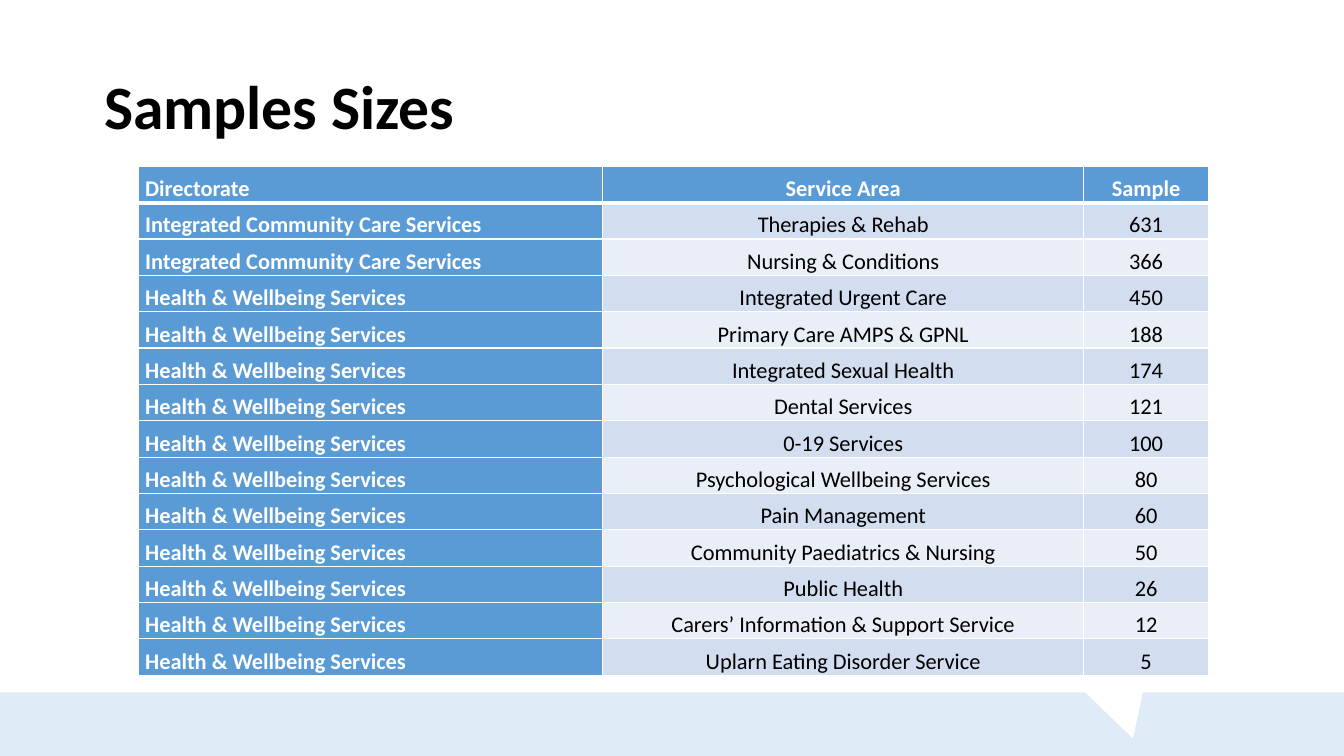
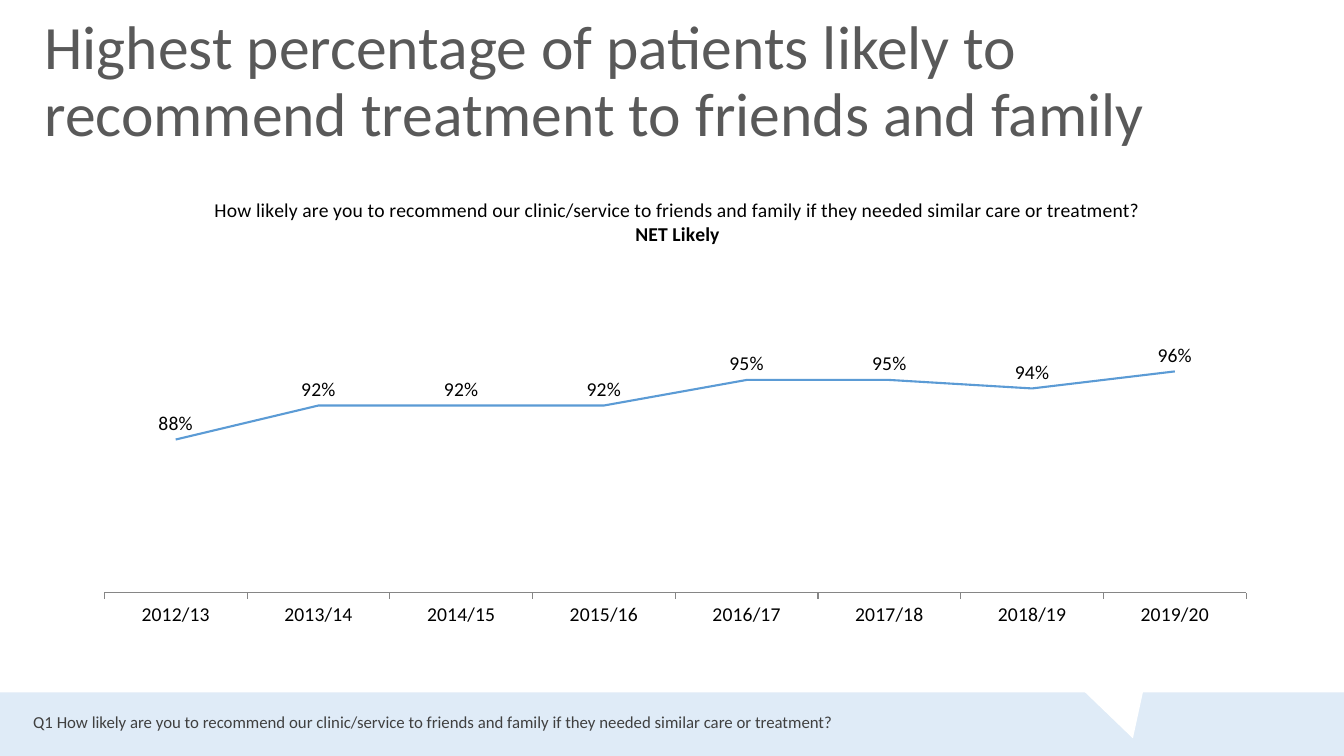
from lxml.etree import SubElement
from pptx import Presentation
from pptx.chart.data import CategoryChartData
from pptx.dml.color import RGBColor
from pptx.enum.chart import XL_CHART_TYPE, XL_LABEL_POSITION, XL_MARKER_STYLE, XL_TICK_MARK
from pptx.enum.shapes import MSO_SHAPE
from pptx.enum.text import MSO_ANCHOR, MSO_AUTO_SIZE, PP_ALIGN
from pptx.oxml import parse_xml
from pptx.oxml.ns import nsdecls, qn
from pptx.util import Inches, Pt

WIDTH, HEIGHT = Inches(13.33), Inches(7.5)
FONT = "Calibri"
HUES = {
    "white": "FFFFFF", "black": "000000", "blue": "5B9BD5", "band": "DFEBF7",
    "odd": "D2DEEF", "even": "EAEFF7", "gray": "595959", "note": "404040",
    "axis": "868686",
}

CARE = "Integrated Community Care Services"
WELL = "Health & Wellbeing Services"
HEAD = ("Directorate", "Service Area", "Sample")
ROWS = [
    (CARE, "Therapies & Rehab", 631),
    (CARE, "Nursing & Conditions", 366),
    (WELL, "Integrated Urgent Care", 450),
    (WELL, "Primary Care AMPS & GPNL", 188),
    (WELL, "Integrated Sexual Health", 174),
    (WELL, "Dental Services", 121),
    (WELL, "0-19 Services", 100),
    (WELL, "Psychological Wellbeing Services", 80),
    (WELL, "Pain Management", 60),
    (WELL, "Community Paediatrics & Nursing", 50),
    (WELL, "Public Health", 26),
    (WELL, "Carers’ Information & Support Service", 12),
    (WELL, "Uplarn Eating Disorder Service", 5),
]
COLS = (4.61, 4.77, 1.24)

ASK = ("How likely are you to recommend our clinic/service to friends and family "
       "if they needed similar care or treatment?")
# Newest year first; the category axis runs in reverse
SCORES = {
    "2019/20": 0.96, "2018/19": 0.94, "2017/18": 0.95, "2016/17": 0.95,
    "2015/16": 0.92, "2014/15": 0.92, "2013/14": 0.92, "2012/13": 0.88,
}


def hue(name):
    return RGBColor.from_string(HUES[name])


def grid(left, top, width, height):
    """Turn a box on a grid of 100 columns and 100 rows into lengths."""
    return (int(WIDTH * left / 100), int(HEIGHT * top / 100),
            int(WIDTH * width / 100), int(HEIGHT * height / 100))


def style(font, size, color="black", bold=False):
    font.name, font.size, font.bold = FONT, Pt(size), bold
    font.color.rgb = hue(color)


def write(para, text, size, color="black", bold=False):
    run = para.add_run()
    run.text = text
    style(run.font, size, color, bold)


# Shared parts
def add_band(slide, master):
    """Make the bottom band and its notch, and set them behind the master."""
    parts = [
        (MSO_SHAPE.RECTANGLE, grid(0, 91.6, 100, 8.4), "band", 0),
        (MSO_SHAPE.ISOSCELES_TRIANGLE, grid(80.65, 88.67, 5.78, 9.2), "white", 163.1),
    ]
    for step, (kind, box, color, turn) in enumerate(parts):
        part = slide.shapes.add_shape(kind, *box)
        part.shadow.inherit = False
        part.fill.solid()
        part.fill.fore_color.rgb = hue(color)
        part.line.fill.background()
        part.rotation = turn
        part.element.nvSpPr.cNvPr.set("id", str(100 + step))
        master.shapes.element.insert(2 + step, part.element)


def add_title(slide, text, box, color, bold):
    title = slide.shapes.title
    title.left, title.top, title.width, title.height = box
    frame = title.text_frame
    frame.word_wrap = True
    frame.auto_size = MSO_AUTO_SIZE.NONE
    frame.vertical_anchor = MSO_ANCHOR.MIDDLE
    para = frame.paragraphs[0]
    para.alignment = PP_ALIGN.LEFT
    para.line_spacing = 0.9
    write(para, text, 44, color, bold)


def add_note(slide, text, box):
    frame = slide.shapes.add_textbox(*box).text_frame
    frame.word_wrap = True
    write(frame.paragraphs[0], text, 12, "note")


# Table
def edge(cell, widths):
    """Draw white borders; widths are points for left, right, top, bottom."""
    props = cell._tc.get_or_add_tcPr()
    for spot, (side, width) in enumerate(zip("LRTB", widths)):
        line = parse_xml(
            f'<a:ln{side} {nsdecls("a")} w="{Pt(width)}"><a:solidFill>'
            f'<a:srgbClr val="{HUES["white"]}"/></a:solidFill></a:ln{side}>')
        props.insert(spot, line)


def add_sheet(slide, box):
    lines = [HEAD] + ROWS
    sheet = slide.shapes.add_table(len(lines), len(HEAD), *box).table
    for col, share in zip(sheet.columns, COLS):
        col.width = int(box[2] * share / sum(COLS))
    for r, line in enumerate(lines):
        sheet.rows[r].height = box[3] // len(lines)
        for c, text in enumerate(line):
            cell = sheet.cell(r, c)
            strong = r == 0 or c == 0
            cell.margin_left = cell.margin_right = Inches(0.07)
            cell.margin_top = cell.margin_bottom = 0
            cell.vertical_anchor = MSO_ANCHOR.BOTTOM
            cell.fill.solid()
            cell.fill.fore_color.rgb = hue("blue" if strong else "odd" if r % 2 else "even")
            edge(cell, (1, 1, 3 if r == 1 else 1, 3 if r == 0 else 1))
            para = cell.text_frame.paragraphs[0]
            para.alignment = PP_ALIGN.CENTER if c else PP_ALIGN.LEFT
            write(para, str(text), 16, "white" if strong else "black", strong)


# Chart
def lay_out(node, spot, **shares):
    """Fix a chart part by shares of the chart's size."""
    for old in node.findall(qn("c:layout")):
        node.remove(old)
    layout = parse_xml(f'<c:layout {nsdecls("c")}><c:manualLayout/></c:layout>')
    inner = layout[0]
    if "w" in shares:
        SubElement(inner, qn("c:layoutTarget")).set("val", "inner")
    for key in "xy":
        SubElement(inner, qn(f"c:{key}Mode")).set("val", "edge")
    for key, share in shares.items():
        SubElement(inner, qn(f"c:{key}")).set("val", str(share))
    node.insert(spot, layout)


def add_trend(slide, box):
    data = CategoryChartData(number_format="0%")
    data.categories = list(SCORES)
    data.add_series("Series 1", list(SCORES.values()))
    chart = slide.shapes.add_chart(XL_CHART_TYPE.LINE, *box, data).chart
    style(chart.font, 10)
    chart.has_legend = False

    # Heading
    frame = chart.chart_title.text_frame
    write(frame.paragraphs[0], ASK, 14)
    write(frame.add_paragraph(), "NET Likely", 14, bold=True)
    lay_out(chart.chart_title._element, 1, x=0.11, y=0.03)
    lay_out(chart.plots[0]._element.getparent(), 0, x=0.02, y=0.34, w=0.96, h=0.55)

    # Axes
    years, rate = chart.category_axis, chart.value_axis
    years.reverse_order = True
    years.major_tick_mark = XL_TICK_MARK.OUTSIDE
    years.has_major_gridlines = False
    years.format.line.color.rgb = hue("axis")
    style(years.tick_labels.font, 14)
    rate.minimum_scale, rate.maximum_scale = 0.7, 1
    rate.has_major_gridlines = False
    rate.visible = False

    # Line and labels
    plot = chart.plots[0]
    plot.vary_by_categories = False
    line = plot.series[0]
    line.smooth = False
    line.marker.style = XL_MARKER_STYLE.NONE
    line.format.line.color.rgb = hue("blue")
    line.format.line.width = Pt(1.5)
    labels = line.data_labels
    labels.show_value = True
    labels.position = XL_LABEL_POSITION.ABOVE
    labels.number_format, labels.number_format_is_linked = "0%", False
    style(labels.font, 14)


def main():
    deck = Presentation()
    deck.slide_width, deck.slide_height = WIDTH, HEIGHT
    plain = deck.slide_layouts[5]

    # Sample sizes
    slide = deck.slides.add_slide(plain)
    add_band(slide, deck.slide_master)
    add_title(slide, "Samples Sizes", grid(7, 6.93, 86.25, 15.07), "black", True)
    add_sheet(slide, grid(10.28, 22, 79.65, 67.33))

    # Trend
    slide = deck.slides.add_slide(plain)
    add_title(slide, "Highest percentage of patients likely to recommend treatment "
              "to friends and family", grid(2.55, 1.33, 94.75, 19.33), "gray", False)
    add_trend(slide, grid(6, 23.73, 88.5, 61.47))
    add_note(slide, "Q1 " + ASK, grid(1.73, 93.47, 78.75, 4))

    deck.save("out.pptx")


if __name__ == "__main__":
    main()
